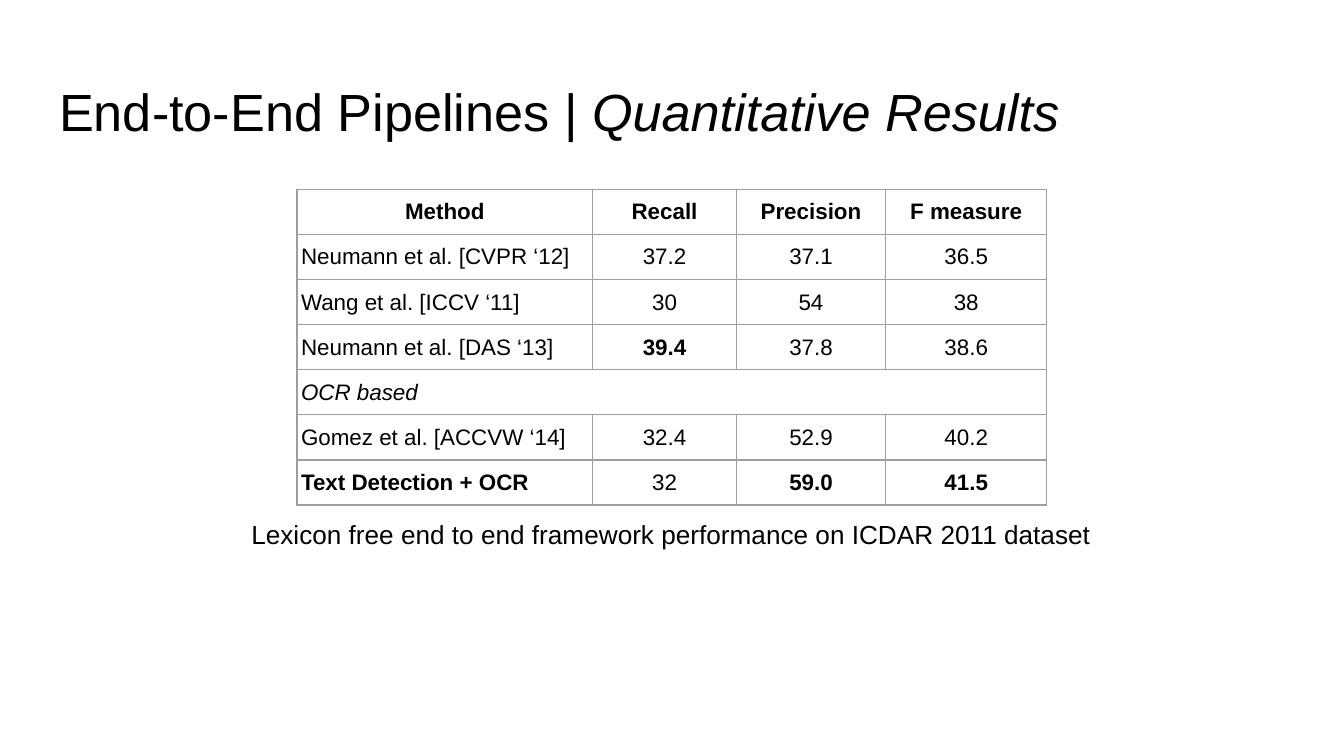
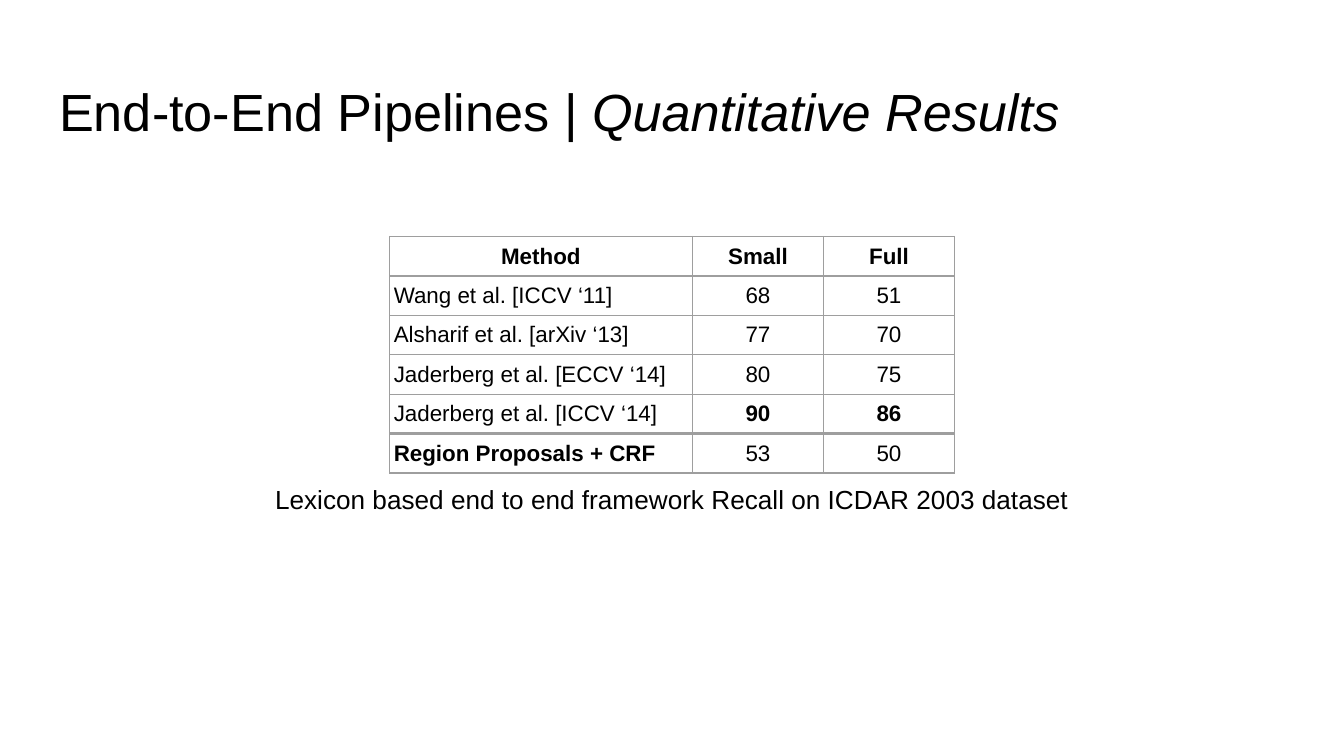
import pptx
import pptx.dml.color
import pptx.enum.text
import pptx.util
from lxml import etree
from pptx.oxml.ns import qn

Inches = pptx.util.Inches
Pt = pptx.util.Pt
PP_ALIGN = pptx.enum.text.PP_ALIGN
MIDDLE = pptx.enum.text.MSO_ANCHOR.MIDDLE
TOP = pptx.enum.text.MSO_ANCHOR.TOP

FONT = "Arial"
INK = "000000"
RULE = "9E9E9E"
TITLE_BOX = (0.34, 0.49, 9.32, 0.63)

LEXICON_FREE = [
    ("Method", "Recall", "Precision", "F measure"),
    ("Neumann et al. [CVPR ‘12]", "37.2", "37.1", "36.5"),
    ("Wang et al. [ICCV ‘11]", "30", "54", "38"),
    ("Neumann et al. [DAS ‘13]", "39.4", "37.8", "38.6"),
    ("OCR based",),
    ("Gomez et al. [ACCVW ‘14]", "32.4", "52.9", "40.2"),
    ("Text Detection + OCR", "32", "59.0", "41.5"),
]
LEXICON_BASED = [
    ("Method", "Small", "Full"),
    ("Wang et al. [ICCV ‘11]", "68", "51"),
    ("Alsharif et al. [arXiv ‘13]", "77", "70"),
    ("Jaderberg et al. [ECCV ‘14]", "80", "75"),
    ("Jaderberg et al. [ICCV ‘14]", "90", "86"),
    ("Region Proposals + CRF", "53", "50"),
]


def rgb(value):
    """Turn a hex string into a colour."""
    return pptx.dml.color.RGBColor.from_string(value)


def style(paragraph, size, align, bold=False, italic=False):
    """Format a whole paragraph."""
    paragraph.alignment = align
    font = paragraph.font
    font.name, font.size, font.bold, font.italic = FONT, Pt(size), bold, italic
    font.color.rgb = rgb(INK)


def set_frame(frame, anchor):
    """Give a text frame equal insets, wrapping and an anchor."""
    frame.auto_size = pptx.enum.text.MSO_AUTO_SIZE.NONE
    frame.word_wrap = True
    frame.vertical_anchor = anchor
    frame.margin_left = frame.margin_right = Inches(0.1)
    frame.margin_top = frame.margin_bottom = Inches(0.1)


def add_title(slide, box):
    """Fill the title placeholder with its topic and italic subtopic."""
    title = slide.shapes.title
    title.left, title.top, title.width, title.height = map(Inches, box)
    set_frame(title.text_frame, TOP)
    heading = title.text_frame.paragraphs[0]
    heading.add_run().text = "End-to-End Pipelines | "
    subtopic = heading.add_run()
    subtopic.text = "Quantitative Results"
    style(heading, 28, PP_ALIGN.LEFT)
    subtopic.font.italic = True


def set_borders(cell, top, bottom):
    """Draw the four cell borders, with top and bottom widths in points."""
    properties = cell._tc.get_or_add_tcPr()
    for tag, width in (("lnL", 0.75), ("lnR", 0.75), ("lnT", top), ("lnB", bottom)):
        line = etree.SubElement(properties, qn("a:" + tag), w=str(Pt(width)))
        fill = etree.SubElement(line, qn("a:solidFill"))
        etree.SubElement(fill, qn("a:srgbClr"), val=RULE)


def add_results(slide, left, top, widths, height, rows, best):
    """Add a results table; best holds the (row, column) of bold body cells."""
    table = slide.shapes.add_table(
        len(rows), len(widths), Inches(left), Inches(top),
        Inches(sum(widths)), Inches(height)).table
    table.first_row = table.horz_banding = False
    for column, width in zip(table.columns, widths):
        column.width = Inches(width)
    last = len(rows) - 1
    for r, values in enumerate(rows):
        section = len(values) == 1
        for c in range(len(widths)):
            cell = table.cell(r, c)
            set_borders(cell, 1.5 if r == last else 0.75, 1.5 if r == last - 1 else 0.75)
            cell.fill.background()
            cell.vertical_anchor = MIDDLE
            cell.margin_left = cell.margin_right = Inches(0.03)
            cell.margin_top = cell.margin_bottom = Inches(0.02)
            if c < len(values):
                cell.text = values[c]
            align = PP_ALIGN.LEFT if r and not c else PP_ALIGN.CENTER
            style(cell.text_frame.paragraphs[0], 12, align, r == 0 or (r, c) in best, section)
        if section:
            table.cell(r, 0).merge(table.cell(r, len(widths) - 1))


def add_caption(slide, box, text, anchor):
    """Add the centred caption below a table."""
    frame = slide.shapes.add_textbox(*map(Inches, box)).text_frame
    set_frame(frame, anchor)
    frame.text = text
    style(frame.paragraphs[0], 14, PP_ALIGN.CENTER)


def add_results_slide(deck, results, caption):
    """Add a slide with the shared title, a results table and its caption."""
    slide = deck.slides.add_slide(deck.slide_layouts[5])
    add_title(slide, TITLE_BOX)
    add_results(slide, *results)
    add_caption(slide, *caption)


def main():
    """Build and save the deck."""
    deck = pptx.Presentation()
    deck.slide_width, deck.slide_height = Inches(10), Inches(10 * 9 / 16)
    add_results_slide(
        deck,
        (2.21, 1.41, (2.2, 1.07, 1.11, 1.2), 2.35, LEXICON_FREE,
         {(3, 1), (6, 0), (6, 2), (6, 3)}),
        ((1.02, 3.76, 7.95, 0.45),
         "Lexicon free end to end framework performance on ICDAR 2011 dataset", TOP))
    add_results_slide(
        deck,
        (2.9, 1.76, (2.25, 0.98, 0.97), 1.76, LEXICON_BASED,
         {(4, 1), (4, 2), (5, 0)}),
        ((1.04, 3.52, 7.92, 0.38),
         "Lexicon based end to end framework Recall on ICDAR 2003 dataset", MIDDLE))
    deck.save("out.pptx")


if __name__ == "__main__":
    main()
